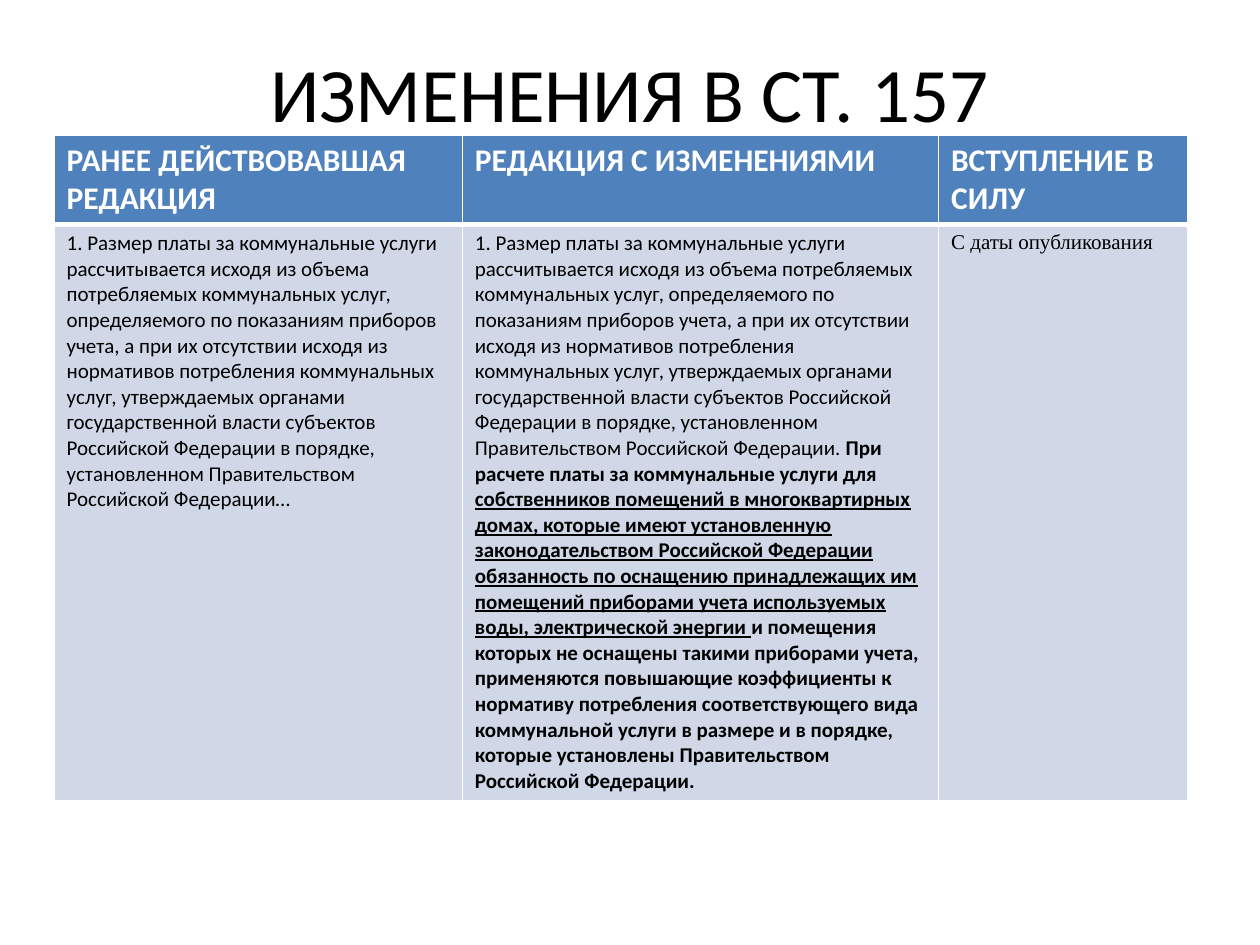
from dataclasses import dataclass

from lxml import etree
from pptx import Presentation
from pptx import util as u
from pptx.dml.color import RGBColor
from pptx.enum import text
from pptx.oxml import ns


@dataclass(frozen=True)
class Theme:
    black: str = "000000"
    white: str = "FFFFFF"
    header_fill: str = "4F81BD"
    body_fill: str = "D0D8E8"
    font: str = "Calibri"
    serif: str = "Times New Roman"
    title_size: int = 44
    header_size: int = 18
    body_size: int = 12
    thin: int = 1
    thick: int = 3


class SlideBuilder:
    """Hold the theme and the current slide, and add elements to it."""

    def __init__(self, presentation, theme):
        self.theme = theme
        self.slide = presentation.slides.add_slide(presentation.slide_layouts[5])

    def place(self, shape, box):
        for name, value in zip(("left", "top", "width", "height"), box):
            setattr(shape, name, u.Cm(value))

    def add_run(self, paragraph, content, color, size, **formats):
        run = paragraph.add_run()
        run.text = content
        values = {"name": self.theme.font, "size": u.Pt(size), "bold": False, **formats}
        for name, value in values.items():
            setattr(run.font, name, value)
        run.font.color.rgb = RGBColor.from_string(color)

    def title(self, content, box):
        shape = self.slide.shapes.title
        self.place(shape, box)
        shape.text_frame.vertical_anchor = text.MSO_ANCHOR.MIDDLE
        paragraph = shape.text_frame.paragraphs[0]
        paragraph.alignment = text.PP_ALIGN.CENTER
        self.add_run(paragraph, content, self.theme.black, self.theme.title_size)

    def borders(self, cell, widths):
        properties = cell._tc.get_or_add_tcPr()
        for side, width in widths.items():
            line = etree.SubElement(properties, ns.qn(f"a:ln{side}"), w=str(u.Pt(width)))
            fill = etree.SubElement(line, ns.qn("a:solidFill"))
            etree.SubElement(fill, ns.qn("a:srgbClr"), val=self.theme.white)

    def cell(self, cell, runs, is_header):
        theme = self.theme
        if is_header:
            fill, color, size, thick_side = theme.header_fill, theme.white, theme.header_size, "B"
        else:
            fill, color, size, thick_side = theme.body_fill, theme.black, theme.body_size, "T"
        self.borders(cell, {**dict.fromkeys("LRTB", theme.thin), thick_side: theme.thick})
        cell.fill.solid()
        cell.fill.fore_color.rgb = RGBColor.from_string(fill)
        for content, formats in runs:
            self.add_run(cell.text_frame.paragraphs[0], content, color, size, **formats)

    def table(self, rows, left, top, widths, heights):
        box = [u.Cm(value) for value in (left, top, sum(widths), sum(heights))]
        table = self.slide.shapes.add_table(len(rows), len(widths), *box).table
        for column, width in zip(table.columns, widths):
            column.width = u.Cm(width)
        for index, (row, height) in enumerate(zip(table.rows, heights)):
            row.height = u.Cm(height)
            for cell, runs in zip(row.cells, rows[index]):
                self.cell(cell, runs, is_header=index == 0)


HEADERS = ("РАНЕЕ ДЕЙСТВОВАВШАЯ РЕДАКЦИЯ", "РЕДАКЦИЯ С ИЗМЕНЕНИЯМИ", "ВСТУПЛЕНИЕ В СИЛУ")
FEE_RULE = (
    "1. Размер платы за коммунальные услуги рассчитывается исходя из объема "
    "потребляемых коммунальных услуг, определяемого по показаниям приборов учета, "
    "а при их отсутствии исходя из нормативов потребления коммунальных услуг, "
    "утверждаемых органами государственной власти субъектов Российской Федерации "
    "в порядке, установленном Правительством Российской Федерации"
)
OWNERS = (
    "собственников помещений в многоквартирных домах, которые имеют установленную "
    "законодательством Российской Федерации обязанность по оснащению принадлежащих им "
    "помещений приборами учета используемых воды, электрической энергии "
)
COEFFICIENTS = (
    "и помещения которых не оснащены такими приборами учета, применяются повышающие "
    "коэффициенты к нормативу потребления соответствующего вида коммунальной услуги "
    "в размере и в порядке, которые установлены Правительством Российской Федерации."
)


def main():
    theme = Theme()
    presentation = Presentation()
    presentation.slide_width, presentation.slide_height = u.Cm(25.4), u.Cm(19.05)
    builder = SlideBuilder(presentation, theme)
    builder.title("ИЗМЕНЕНИЯ В СТ. 157", (1.27, 0.76, 22.86, 2.16))
    header = [[(label, {"bold": True})] for label in HEADERS]
    body = [
        [(FEE_RULE + "…", {})],
        [
            (FEE_RULE + ". ", {}),
            ("При расчете платы за коммунальные услуги для ", {"bold": True}),
            (OWNERS, {"bold": True, "underline": True}),
            (COEFFICIENTS, {"bold": True}),
        ],
        [("С даты опубликования", {"name": theme.serif})],
    ]
    builder.table([header, body], 1.09, 2.72, (8.23, 9.6, 5.03), (1.78, 11.43))
    presentation.save("out.pptx")


if __name__ == "__main__":
    main()
